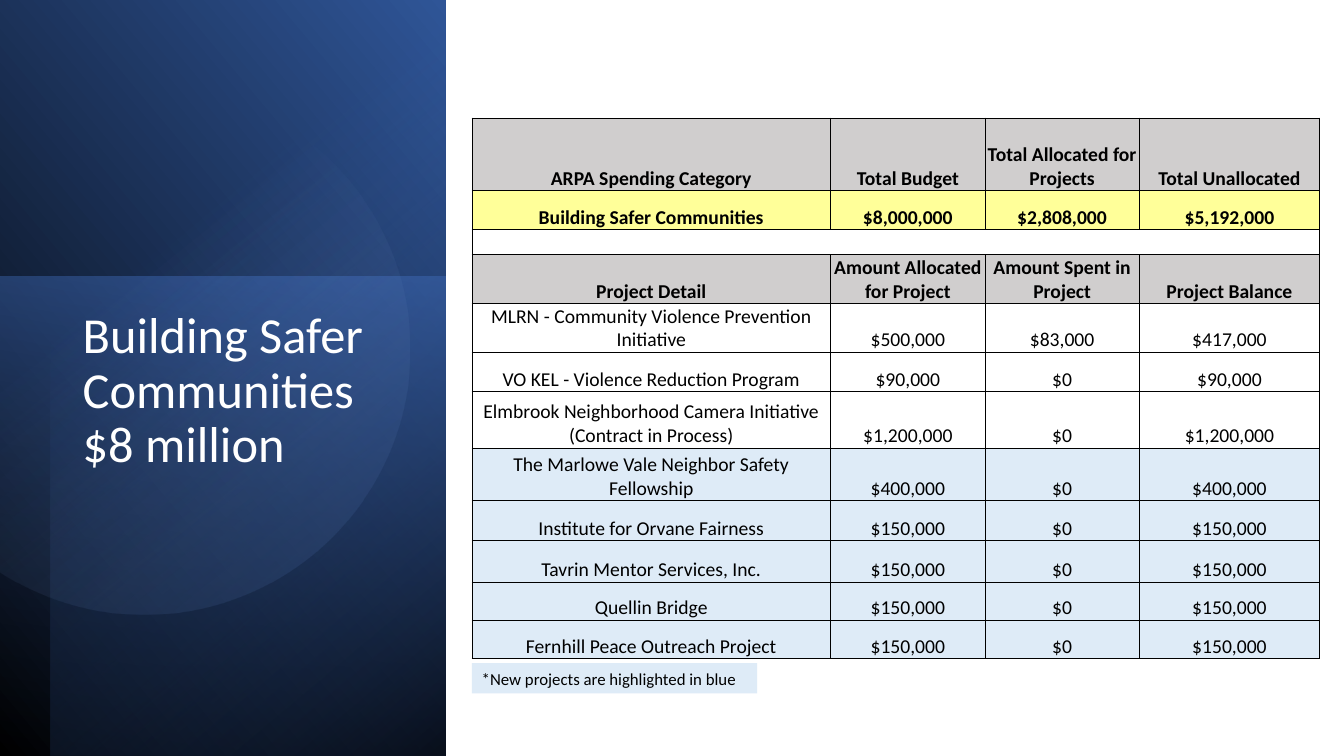
import math
from pptx import Presentation
from pptx.dml.color import RGBColor
from pptx.enum.shapes import MSO_SHAPE
from pptx.enum.text import MSO_ANCHOR, MSO_AUTO_SIZE, PP_ALIGN
from pptx.oxml import parse_xml
from pptx.oxml.ns import nsdecls, qn
from pptx.util import Pt

PX = 9144
RECT = MSO_SHAPE.RECTANGLE
TOP, MIDDLE, BOTTOM = MSO_ANCHOR.TOP, MSO_ANCHOR.MIDDLE, MSO_ANCHOR.BOTTOM
LEFT, CENTER = PP_ALIGN.LEFT, PP_ALIGN.CENTER
GROW, FIXED = MSO_AUTO_SIZE.SHAPE_TO_FIT_TEXT, MSO_AUTO_SIZE.NONE

BLACK = RGBColor(0x00, 0x00, 0x00)
WHITE = RGBColor(0xFF, 0xFF, 0xFF)
DEEP_BLUE = RGBColor(0x2F, 0x55, 0x97)
ACCENT = RGBColor(0x44, 0x72, 0xC4)
NAVY = RGBColor(0x20, 0x38, 0x64)
SOFT_BLUE = RGBColor(0x8F, 0xAA, 0xDC)
GRAY = RGBColor(0xD0, 0xCE, 0xCE)
YELLOW = RGBColor(0xFF, 0xFF, 0x99)
PALE_BLUE = RGBColor(0xDE, 0xEB, 0xF7)

PANEL_LAYERS = [
    ((-155, 155, 752, 442), 90, True, 310, [(0, BLACK, 100), (100, DEEP_BLUE, 100)]),
    ((-17, 291, 476, 442), 270, False, 190, [(0, ACCENT, 50), (100, NAVY, 0)]),
    ((-129, 179, 750, 392), 270, True, 220, [(0, BLACK, 59), (69, ACCENT, 0)]),
]
COLUMNS = [356, 153, 153, 179]
ROWS = [
    (72, GRAY, True, ["ARPA Spending Category", "Total Budget",
                      "Total Allocated for Projects", "Total Unallocated"]),
    (39, YELLOW, True, ["Building Safer Communities", "$8,000,000", "$2,808,000", "$5,192,000"]),
    (16, None, False, []),
    (45, GRAY, True, ["Project Detail", "Amount Allocated for Project",
                      "Amount Spent in Project", "Project Balance"]),
    (39, None, False, ["MLRN - Community Violence Prevention Initiative",
                       "$500,000", "$83,000", "$417,000"]),
    (39, None, False, ["VO KEL - Violence Reduction Program", "$90,000", "$0", "$90,000"]),
    (56, None, False, ["Elmbrook Neighborhood Camera Initiative (Contract in Process)",
                       "$1,200,000", "$0", "$1,200,000"]),
    (52, PALE_BLUE, False, ["The Marlowe Vale Neighbor Safety Fellowship",
                            "$400,000", "$0", "$400,000"]),
    (40, PALE_BLUE, False, ["Institute for Orvane Fairness", "$150,000", "$0", "$150,000"]),
    (41, PALE_BLUE, False, ["Tavrin Mentor Services, Inc.", "$150,000", "$0", "$150,000"]),
    (38, PALE_BLUE, False, ["Quellin Bridge", "$150,000", "$0", "$150,000"]),
    (38, PALE_BLUE, False, ["Fernhill Peace Outreach Project", "$150,000", "$0", "$150,000"]),
]


def emu(*lengths):
    """Turn px lengths into EMU."""
    return [round(n * PX) for n in lengths]


def write(tf, text, size=14, color=BLACK, bold=False, align=LEFT, spacing=None):
    """Write one formatted paragraph into a text frame."""
    p = tf.paragraphs[0]
    p.alignment = align
    if spacing:
        p.line_spacing = spacing
    r = p.add_run()
    r.text = text
    r.font.name, r.font.size, r.font.bold = "Calibri", Pt(size), bold
    r.font.color.rgb = color


def set_gradient(sp, stops, angle):
    """Fill a shape with a linear gradient of (position, colour, opacity) stops."""
    gs = "".join(
        f'<a:gs pos="{pos * 1000}"><a:srgbClr val="{color}">'
        f'<a:alpha val="{opacity * 1000}"/></a:srgbClr></a:gs>'
        for pos, color, opacity in stops)
    sp.fill.background()
    sp.line.fill.background()
    sp.shadow.inherit = False
    spPr = sp.element.spPr
    spPr.replace(spPr.find(qn("a:noFill")), parse_xml(
        f'<a:gradFill {nsdecls("a")} rotWithShape="1"><a:gsLst>{gs}</a:gsLst>'
        f'<a:lin ang="{angle * 60000}" scaled="0"/></a:gradFill>'))


def add_disc(s, cx, cy, radius, half_arc, turn):
    """Add the clipped disc: an arc closed by its chord, then turned."""
    points = [emu(cx + radius * math.cos(a), cy + radius * math.sin(a))
              for a in (math.radians(d - turn) for d in range(-half_arc, half_arc + 1, 2))]
    builder = s.shapes.build_freeform(*points[0])
    builder.add_line_segments(points[1:], close=True)
    disc = builder.convert_to_shape()
    disc.rotation = turn
    set_gradient(disc, [(39, SOFT_BLUE, 0), (100, DEEP_BLUE, 26)], 310)


def add_panel(s):
    """Layer the gradients of the blue left panel."""
    for box, rotation, flipped, angle, stops in PANEL_LAYERS:
        sp = s.shapes.add_shape(RECT, *emu(*box))
        sp.rotation = rotation
        if flipped:
            sp.element.spPr.find(qn("a:xfrm")).set("flipH", "1")
        set_gradient(sp, stops, angle)
    add_disc(s, 181, 394, 263, 123, 101.6)


def add_title(s, x, y, w, h):
    """Place the slide title in front of the panel."""
    title = s.shapes.title
    title.left, title.top, title.width, title.height = emu(x, y, w, h)
    title.element.getparent().append(title.element)
    tf = title.text_frame
    tf.word_wrap, tf.auto_size, tf.vertical_anchor = True, FIXED, TOP
    write(tf, "Building Safer Communities $8 million", 36, WHITE, spacing=0.9)


def format_cell(cell, fill, inset):
    """Set fill, insets, anchor and thin black borders of a cell."""
    cell.vertical_anchor = BOTTOM
    cell.margin_left = cell.margin_top = cell.margin_right = inset * PX
    cell.margin_bottom = 0
    tcPr = cell._tc.get_or_add_tcPr()
    for side in ("lnL", "lnR", "lnT", "lnB"):
        tcPr.append(parse_xml(
            f'<a:{side} {nsdecls("a")} w="6350"><a:solidFill>'
            f'<a:srgbClr val="{BLACK}"/></a:solidFill></a:{side}>'))
    if fill is None:
        cell.fill.background()
    else:
        cell.fill.solid()
        cell.fill.fore_color.rgb = fill


def add_budget_table(s, x, y, w, h):
    """Add the table of spending totals and project details."""
    frame = s.shapes.add_table(len(ROWS), len(COLUMNS), *emu(x, y, w, h))
    table = frame.table
    table.first_row = table.horz_banding = False
    for column, width in zip(table.columns, COLUMNS):
        column.width = width * PX
    for i, (height, fill, bold, texts) in enumerate(ROWS):
        table.rows[i].height = height * PX
        for j in range(len(COLUMNS)):
            cell = table.cell(i, j)
            format_cell(cell, fill, 1 if i else 0)
            if texts:
                write(cell.text_frame, texts[j], bold=bold, align=CENTER)
            else:
                cell.text_frame.paragraphs[0]._p.append(
                    parse_xml(f'<a:endParaRPr {nsdecls("a")} sz="1400"/>'))
        if not texts:
            table.cell(i, 0).merge(table.cell(i, len(COLUMNS) - 1))
    frame.height = h * PX


def add_note(s, x, y, w, h):
    """Add the highlighted note below the table."""
    sp = s.shapes.add_shape(RECT, *emu(x, y, w, h))
    sp.shadow.inherit = False
    sp.fill.solid()
    sp.fill.fore_color.rgb = PALE_BLUE
    sp.line.fill.background()
    tf = sp.text_frame
    tf.word_wrap, tf.auto_size, tf.vertical_anchor = True, GROW, MIDDLE
    write(tf, "*New projects are highlighted in blue", 12)


def main():
    """Build the slide and save it."""
    prs = Presentation()
    prs.slide_width, prs.slide_height = emu(1333, 750)
    s = prs.slides.add_slide(prs.slide_layouts[5])
    add_panel(s)
    add_title(s, 72, 303, 315, 336)
    add_budget_table(s, 468, 117, 841, 534)
    add_note(s, 468, 658, 283, 30)
    prs.save("out.pptx")


if __name__ == "__main__":
    main()
